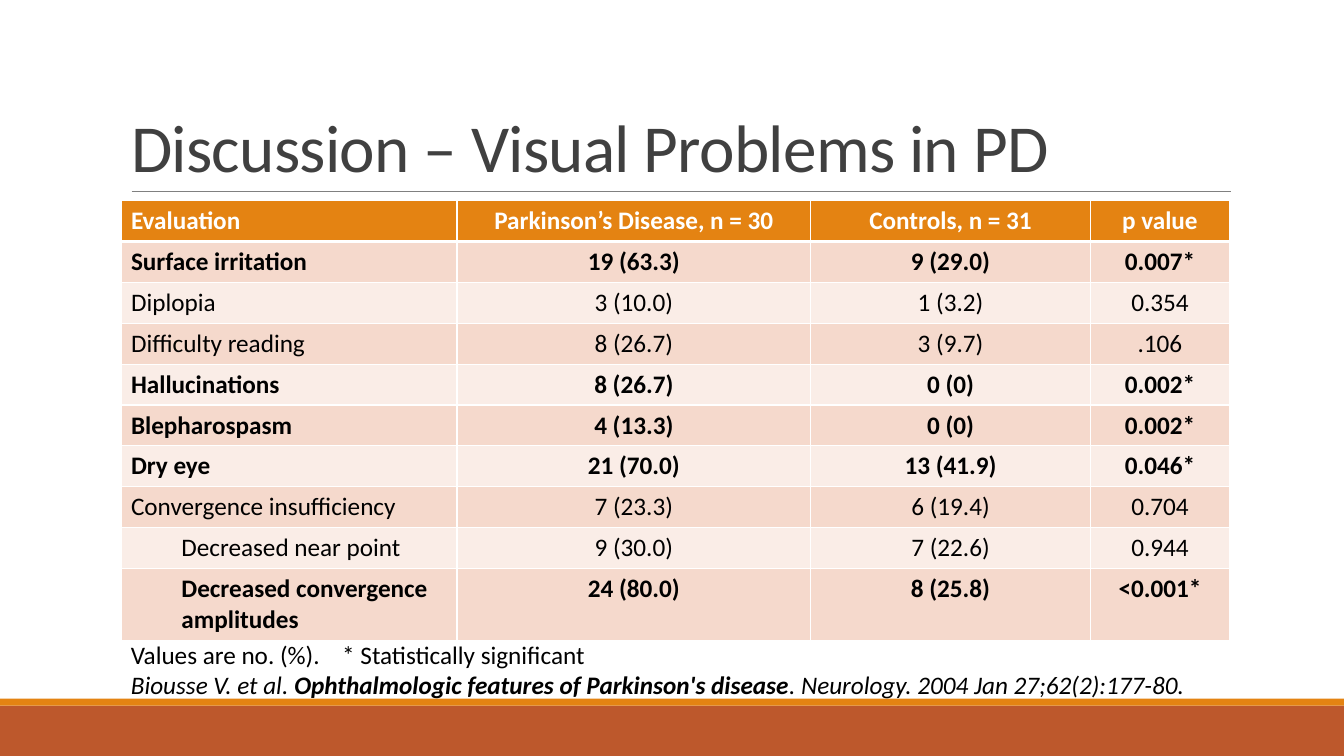
from dataclasses import dataclass

from lxml.etree import SubElement
from pptx import Presentation
from pptx.dml.color import RGBColor
from pptx.enum.shapes import MSO_CONNECTOR, MSO_SHAPE
from pptx.enum.text import MSO_ANCHOR, MSO_AUTO_SIZE, PP_ALIGN
from pptx.oxml.ns import qn
from pptx.util import Pt


@dataclass(frozen=True)
class Theme:
    font: str = "Calibri"
    title_size: float = 48
    body_size: float = 18
    title: str = "404040"
    text: str = "000000"
    white: str = "FFFFFF"
    rule: str = "808080"
    orange: str = "E48312"
    rust: str = "BD582C"
    bands: tuple = ("F5D9CC", "FAEDE7")


class SlideBuilder:
    def __init__(self, slide, theme):
        self.slide = slide
        self.theme = theme

    def add_run(self, paragraph, text, color, size, bold=False, italic=False):
        run = paragraph.add_run()
        run.text = text
        run.font.name = self.theme.font
        run.font.size = Pt(size)
        run.font.bold = bold
        run.font.italic = italic
        run.font.color.rgb = RGBColor.from_string(color)
        return run

    def place(self, shape, left, top, width, height):
        shape.left, shape.top = Pt(left), Pt(top)
        shape.width, shape.height = Pt(width), Pt(height)

    def bar(self, left, top, width, height, color):
        shape = self.slide.shapes.add_shape(
            MSO_SHAPE.RECTANGLE, Pt(left), Pt(top), Pt(width), Pt(height))
        shape.shadow.inherit = False
        shape.fill.solid()
        shape.fill.fore_color.rgb = RGBColor.from_string(color)
        shape.line.fill.background()

    def horizontal_line(self, left, right, top, color, weight):
        line = self.slide.shapes.add_connector(
            MSO_CONNECTOR.STRAIGHT, Pt(left), Pt(top), Pt(right), Pt(top))
        line.line.color.rgb = RGBColor.from_string(color)
        line.line.width = Pt(weight)
        SubElement(line._element.spPr, qn("a:effectLst"))

    def title(self, text, left, top, width, height):
        shape = self.slide.shapes.title
        self.place(shape, left, top, width, height)
        frame = shape.text_frame
        frame.word_wrap = True
        frame.auto_size = MSO_AUTO_SIZE.NONE
        frame.vertical_anchor = MSO_ANCHOR.BOTTOM
        paragraph = frame.paragraphs[0]
        paragraph.alignment = PP_ALIGN.LEFT
        paragraph.line_spacing = 0.85
        run = self.add_run(paragraph, text, self.theme.title, self.theme.title_size)
        run.font._element.set("spc", "-50")

    def borders(self, cell, top, bottom):
        properties = cell._tc.get_or_add_tcPr()
        for side, weight in (("L", 1), ("R", 1), ("T", top), ("B", bottom)):
            line = SubElement(properties, qn(f"a:ln{side}"), w=str(Pt(weight)))
            fill = SubElement(line, qn("a:solidFill"))
            SubElement(fill, qn("a:srgbClr"), val=self.theme.white)

    def cell(self, cell, text, fill, color, bold, centered, indent=0):
        cell.fill.solid()
        cell.fill.fore_color.rgb = RGBColor.from_string(fill)
        paragraph = cell.text_frame.paragraphs[0]
        paragraph.alignment = PP_ALIGN.CENTER if centered else PP_ALIGN.LEFT
        if indent:
            paragraph.level = 1
            paragraph._p.get_or_add_pPr().set("marL", str(Pt(indent)))
        self.add_run(paragraph, text, color, self.theme.body_size, bold)

    def table(self, header, findings, left, top, widths, heights):
        theme = self.theme
        table = self.slide.shapes.add_table(
            len(heights), len(widths), Pt(left), Pt(top),
            Pt(sum(widths)), Pt(sum(heights))).table
        for column, width in zip(table.columns, widths):
            column.width = Pt(width)
        for row, height in zip(table.rows, heights):
            row.height = Pt(height)

        # Header row
        for column, text in enumerate(header):
            cell = table.cell(0, column)
            self.borders(cell, top=1, bottom=3)
            self.cell(cell, text, theme.orange, theme.white, True, column > 0)

        # Banded findings; significant ones are bold
        for row, (indent, *values) in enumerate(findings, start=1):
            significant = values[-1].endswith("*")
            for column, text in enumerate(values):
                cell = table.cell(row, column)
                self.borders(cell, top=3 if row == 1 else 1, bottom=1)
                self.cell(cell, text, theme.bands[(row - 1) % 2], theme.text,
                          significant, column > 0, 0 if column else indent)

    def text_box(self, paragraphs, left, top, width, height, tab_stop):
        shape = self.slide.shapes.add_textbox(
            Pt(left), Pt(top), Pt(width), Pt(height))
        frame = shape.text_frame
        frame.word_wrap = True
        frame.auto_size = MSO_AUTO_SIZE.SHAPE_TO_FIT_TEXT
        for index, runs in enumerate(paragraphs):
            paragraph = frame.add_paragraph() if index else frame.paragraphs[0]
            tabs = SubElement(paragraph._p.get_or_add_pPr(), qn("a:tabLst"))
            SubElement(tabs, qn("a:tab"), pos=str(Pt(tab_stop)), algn="l")
            for text, bold, italic in runs:
                self.add_run(paragraph, text, self.theme.text,
                             self.theme.body_size, bold, italic)


HEADER = ("Evaluation", "Parkinson’s Disease, n = 30", "Controls, n = 31", "p value")
# Indent, evaluation, patients, controls, p value
FINDINGS = (
    (0, "Surface irritation", "19 (63.3)", "9 (29.0)", "0.007*"),
    (0, "Diplopia", "3 (10.0)", "1 (3.2)", "0.354"),
    (0, "Difficulty reading", "8 (26.7)", "3 (9.7)", ".106"),
    (0, "Hallucinations", "8 (26.7)", "0 (0)", "0.002*"),
    (0, "Blepharospasm", "4 (13.3)", "0 (0)", "0.002*"),
    (0, "Dry eye", "21 (70.0)", "13 (41.9)", "0.046*"),
    (0, "Convergence insufficiency", "7 (23.3)", "6 (19.4)", "0.704"),
    (36, "Decreased near point", "9 (30.0)", "7 (22.6)", "0.944"),
    (36, "Decreased convergence amplitudes", "24 (80.0)", "8 (25.8)", "<0.001*"),
)
# Text, bold, italic
NOTES = (
    (("Values are no. (%).\t* Statistically significant", False, False),),
    (("Biousse V. et al. ", False, True),
     ("Ophthalmologic features of Parkinson's disease", True, True),
     (". Neurology. 2004 Jan 27;62(2):177-80.", False, True)),
)


def main():
    presentation = Presentation()
    presentation.slide_width, presentation.slide_height = Pt(960), Pt(540)
    title_only = presentation.slide_layouts[5]
    theme = Theme()
    builder = SlideBuilder(presentation.slides.add_slide(title_only), theme)
    left, width = 86.4, 792

    # Footer bars and title rule
    builder.bar(0, 504, 960, 36, theme.rust)
    builder.bar(0, 499, 960, 5, theme.orange)
    builder.horizontal_line(94, 879, 136.8, theme.rule, 0.5)

    # Title, table and notes
    builder.title("Discussion – Visual Problems in PD", left, 22.5, width, 114.2)
    builder.table(HEADER, FINDINGS, left, 143.3,
                  widths=(240, 252.8, 199.6, 99.6),
                  heights=[29.2] * len(FINDINGS) + [50.4])
    builder.text_box(NOTES, left, 453, width, 51, tab_stop=151)

    presentation.save("out.pptx")


if __name__ == "__main__":
    main()
